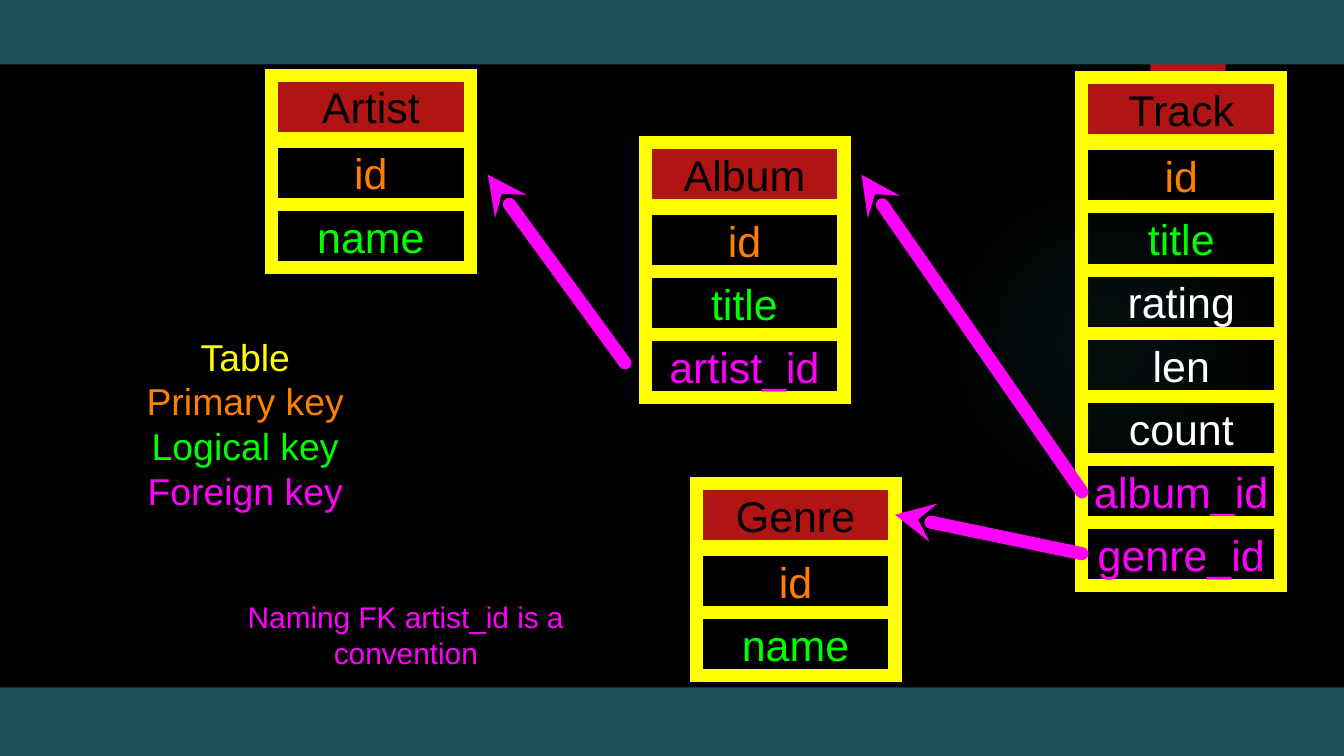
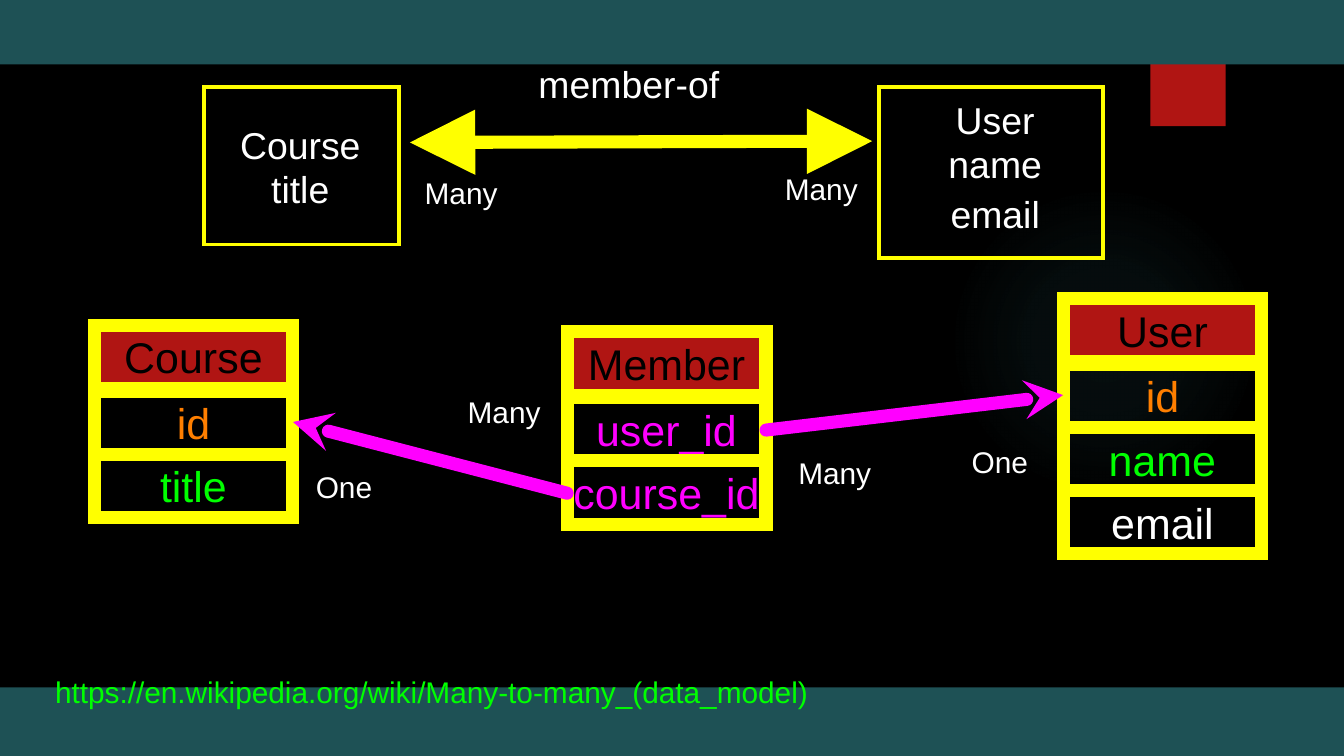
from dataclasses import dataclass

from lxml import etree
from pptx import Presentation
from pptx import util as u
from pptx.dml import color
from pptx.enum import shapes, text
from pptx.oxml import ns, parse_xml


@dataclass(frozen=True)
class Theme:
    font: str = "Arial"
    background: str = "000000"
    band: str = "1E5155"
    header: str = "B01513"
    header_text: str = "000000"
    glow: str = "50B9C1"
    table: str = "FFFF00"
    primary: str = "FF7F00"
    logical: str = "00FF00"
    foreign: str = "FF00FF"
    plain: str = "FFFFFF"
    cell_size: int = 23
    body_size: int = 20
    label_size: int = 16
    heavy: int = 7
    thin: int = 2


THEME = Theme()
WIDTH = 10
HEIGHT = WIDTH * 9 / 16
BAND_HEIGHT = 0.51
CELL_WIDTH, CELL_HEIGHT = 1.48, 0.47
HEADER_STEP, ROW_STEP = 0.49, 0.47
LABEL_HEIGHT, LABEL_INSET = 0.32, (0.06, 0.03)

P, L, F, N = THEME.primary, THEME.logical, THEME.foreign, THEME.plain

SCHEMA = {
    "tables": [
        ("Artist", 2.02, 0.56, [("id", P), ("name", L)]),
        ("Album", 4.8, 1.06, [("id", P), ("title", L), ("artist_id", F)]),
        ("Genre", 5.18, 3.6, [("id", P), ("name", L)]),
        ("Track", 8.05, 0.58, [
            ("id", P), ("title", L), ("rating", N), ("len", N),
            ("count", N), ("album_id", F), ("genre_id", F),
        ]),
    ],
    "keys": [
        ((6.41, 1.3), (8.05, 3.66)),
        ((6.66, 3.83), (8.05, 4.12)),
        ((3.63, 1.3), (4.65, 2.7)),
    ],
    "texts": [
        ((0.73, 2.48, 2.19, 1.34), THEME.body_size, [
            ("Table", THEME.table), ("Primary key", P),
            ("Logical key", L), ("Foreign key", F),
        ]),
        ((1.65, 4.44, 2.74, 0.56), THEME.label_size,
         [("Naming FK artist_id is a convention", F)]),
    ],
}

MANY_TO_MANY = {
    "frames": [(6.54, 0.65, 1.67, 1.27), (1.52, 0.65, 1.45, 1.17)],
    "relation": ((3.05, 1.06), (6.49, 1.05)),
    "tables": [
        ("Course", 0.7, 2.42, [("id", P), ("title", L)]),
        ("Member", 4.22, 2.47, [("user_id", F), ("course_id", F)]),
        ("User", 7.91, 2.22, [("id", P), ("name", L), ("email", N)]),
    ],
    "keys": [((2.18, 3.14), (4.22, 3.67)), ((7.91, 2.94), (5.7, 3.2))],
    "texts": [
        ((1.75, 0.89, 0.97, 0.7), THEME.body_size, [("Course", N), ("title", N)]),
        ((3.9, 0.43, 1.56, 0.38), THEME.body_size, [("member-of", N)]),
        ((6.98, 0.7, 0.85, 0.38), THEME.body_size, [("User", N)]),
        ((7.03, 1.03, 0.75, 0.38), THEME.body_size, [("name", N)]),
        ((6.91, 1.4, 0.99, 0.38), THEME.body_size, [("email", N)]),
    ],
    "labels": [
        ("Many", 3.1, 1.27, 0.75, N),
        ("Many", 5.78, 1.24, 0.75, N),
        ("Many", 3.42, 2.9, 0.75, N),
        ("Many", 5.88, 3.35, 0.78, N),
        ("One", 2.29, 3.46, 0.75, N),
        ("One", 7.17, 3.27, 0.61, N),
        ("https://en.wikipedia.org/wiki/Many-to-many_(data_model)",
         0.35, 4.98, 5.92, L),
    ],
}


def rgb(value):
    return color.RGBColor.from_string(value)


def inches(values):
    return [u.Inches(value) for value in values]


def write(shape, lines, size, align=text.PP_ALIGN.CENTER,
          anchor=text.MSO_ANCHOR.MIDDLE, inset=(0, 0)):
    frame = shape.text_frame
    frame.word_wrap = True
    frame.vertical_anchor = anchor
    frame.margin_left = frame.margin_right = u.Inches(inset[0])
    frame.margin_top = frame.margin_bottom = u.Inches(inset[1])
    frame.text = "\n".join(line for line, _ in lines)
    for para, (_, tint) in zip(frame.paragraphs, lines):
        para.alignment = align
        for span in para.runs:
            span.font.name = THEME.font
            span.font.size = u.Pt(size)
            span.font.color.rgb = rgb(tint)


def add_box(page, place, fill=None, line=None, weight=THEME.heavy,
            kind=shapes.MSO_SHAPE.RECTANGLE):
    box = page.shapes.add_shape(kind, *inches(place))
    box.shadow.inherit = False
    if fill:
        box.fill.solid()
        box.fill.fore_color.rgb = rgb(fill)
    else:
        box.fill.background()
    if line:
        box.line.color.rgb = rgb(line)
        box.line.width = u.Pt(weight)
        etree.SubElement(box.line._get_or_add_ln(), ns.qn("a:miter"), lim="800000")
    else:
        box.line.fill.background()
    return box


def add_text(page, place, size, lines, **style):
    box = page.shapes.add_textbox(*inches(place))
    write(box, lines, size, **style)


def add_arrow(page, start, end, tint, ends, head, scale="med"):
    arrow = page.shapes.add_connector(
        shapes.MSO_CONNECTOR.STRAIGHT, *inches(start + end))
    arrow.line.color.rgb = rgb(tint)
    arrow.line.width = u.Pt(THEME.heavy)
    outline = arrow.line._get_or_add_ln()
    outline.set("cap", "rnd")
    for name in ends:
        etree.SubElement(outline, ns.qn(f"a:{name}"), type=head, w=scale, len=scale)
    etree.SubElement(arrow._element.spPr, ns.qn("a:effectLst"))


def add_glow(page):
    glow = add_box(page, (7.06, 1.38, 2.31, 2.31), kind=shapes.MSO_SHAPE.OVAL)
    stops = "".join(
        f'<a:gs pos="{position}000"><a:srgbClr val="{THEME.glow}">'
        f'<a:alpha val="{alpha}000"/></a:srgbClr></a:gs>'
        for position, alpha in ((0, 7), (36, 6), (69, 0)))
    gradient = parse_xml(
        f'<a:gradFill {ns.nsdecls("a")}><a:gsLst>{stops}</a:gsLst>'
        '<a:path path="circle"><a:fillToRect l="50000" t="50000" r="50000" '
        'b="50000"/></a:path></a:gradFill>')
    properties = glow._element.spPr
    properties.replace(properties.find(ns.qn("a:noFill")), gradient)


def add_tab(page):
    tab = add_box(page, (8.56, 0, 0.56, 0.94), THEME.header)
    tab._element.spPr.find(ns.qn("a:effectLst")).append(parse_xml(
        f'<a:outerShdw {ns.nsdecls("a")} blurRad="38100" dist="25400" '
        'dir="5400000"><a:srgbClr val="000000"><a:alpha val="45000"/>'
        '</a:srgbClr></a:outerShdw>'))


def add_page(deck):
    page = deck.slides.add_slide(deck.slide_layouts[6])
    page.background.fill.solid()
    page.background.fill.fore_color.rgb = rgb(THEME.background)
    add_glow(page)
    add_tab(page)
    for top in (HEIGHT - BAND_HEIGHT, -0.03):
        add_box(page, (0, top, WIDTH, BAND_HEIGHT), THEME.band)
    return page


def add_entity(page, name, left, top, fields):
    rows = [(name, THEME.header_text)] + fields
    for index, row in enumerate(rows):
        offset = HEADER_STEP + (index - 1) * ROW_STEP if index else 0
        cell = add_box(page, (left, top + offset, CELL_WIDTH, CELL_HEIGHT),
                       None if index else THEME.header, THEME.table)
        write(cell, [row], THEME.cell_size)


def draw(deck, content):
    page = add_page(deck)
    for place in content.get("frames", []):
        add_box(page, place, line=THEME.table, weight=THEME.thin)
    if "relation" in content:
        add_arrow(page, *content["relation"], THEME.table,
                  ("headEnd", "tailEnd"), "triangle", "lg")
    for entity in content["tables"]:
        add_entity(page, *entity)
    for start, end in content["keys"]:
        add_arrow(page, start, end, THEME.foreign, ("headEnd",), "stealth")
    for place, size, lines in content["texts"]:
        add_text(page, place, size, lines)
    for label, left, top, width, tint in content.get("labels", []):
        add_text(page, (left, top, width, LABEL_HEIGHT), THEME.label_size,
                 [(label, tint)], align=text.PP_ALIGN.LEFT,
                 anchor=text.MSO_ANCHOR.TOP, inset=LABEL_INSET)


def main():
    deck = Presentation()
    deck.slide_width, deck.slide_height = inches((WIDTH, HEIGHT))
    for content in (SCHEMA, MANY_TO_MANY):
        draw(deck, content)
    deck.save("out.pptx")


if __name__ == "__main__":
    main()
